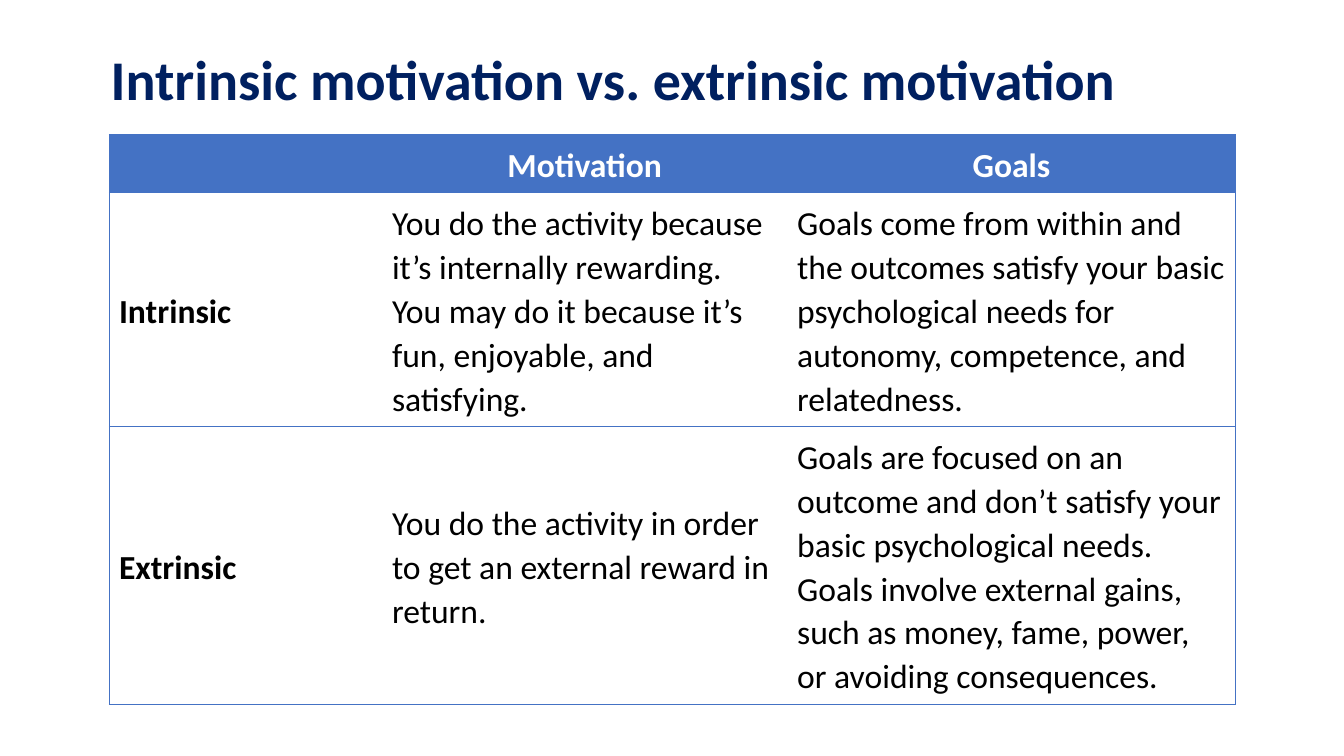
from lxml import etree
from pptx import Presentation
from pptx import util as u
from pptx.dml import color
from pptx.enum import text
from pptx.oxml import ns

BLUE, NAVY, WHITE, BLACK = "4472C4", "002060", "FFFFFF", "000000"
COLUMN_WIDTHS = (6.88, 10.21, 11.3)
ROW_HEIGHTS = (1.46, 5.9, 6.99)
ROWS = (
    ("", "Motivation", "Goals"),
    (
        "Intrinsic",
        "You do the activity because it’s internally rewarding. "
        "You may do it because it’s fun, enjoyable, and satisfying.",
        "Goals come from within and the outcomes satisfy your basic "
        "psychological needs for autonomy, competence, and relatedness.",
    ),
    (
        "Extrinsic",
        "You do the activity in order to get an external reward in return.",
        "Goals are focused on an outcome and don’t satisfy your basic "
        "psychological needs. Goals involve external gains, such as money, "
        "fame, power, or avoiding consequences.",
    ),
)


def rgb(value):
    """Turn a hex string into a colour."""
    return color.RGBColor.from_string(value)


def assign(target, **values):
    """Set each named attribute on the target."""
    for name, value in values.items():
        setattr(target, name, value)


def write(para, words, size, hue, bold):
    """Add one formatted run to a paragraph."""
    span = para.add_run()
    span.text = words
    assign(span.font, name="Calibri", size=u.Pt(size), bold=bold)
    span.font.color.rgb = rgb(hue)


def add_borders(cell, first, last):
    """Draw the horizontal borders of a cell and its outer side borders."""
    properties = cell._tc.get_or_add_tcPr()
    sides = {"lnL": first, "lnR": last, "lnT": True, "lnB": True}
    for side, shown in sides.items():
        line = etree.SubElement(properties, ns.qn(f"a:{side}"), w=str(u.Pt(0.5)))
        if shown:
            fill = etree.SubElement(line, ns.qn("a:solidFill"))
            etree.SubElement(fill, ns.qn("a:srgbClr"), val=BLUE)
        else:
            etree.SubElement(line, ns.qn("a:noFill"))


def fill_cell(cell, words, header, first, last):
    """Format one table cell and write its words."""
    add_borders(cell, first, last)
    if header:
        cell.fill.solid()
        cell.fill.fore_color.rgb = rgb(BLUE)
    else:
        cell.fill.background()
    assign(
        cell,
        vertical_anchor=text.MSO_ANCHOR.MIDDLE,
        margin_left=u.Cm(0.25),
        margin_right=u.Cm(0.25),
        margin_top=u.Cm(0.2),
        margin_bottom=u.Cm(0.15),
    )
    para = cell.text_frame.paragraphs[0]
    align = text.PP_ALIGN.CENTER if header else text.PP_ALIGN.LEFT
    assign(para, alignment=align, line_spacing=1.07)
    if words:
        write(para, words, 24, WHITE if header else BLACK, header or first)


def add_title(page, left, top, width, height):
    """Place the slide title in the given box."""
    box = page.shapes.add_textbox(*map(u.Cm, (left, top, width, height)))
    assign(box.text_frame, word_wrap=True, margin_left=u.Cm(0.25))
    words = "Intrinsic motivation vs. extrinsic motivation"
    write(box.text_frame.paragraphs[0], words, 40, NAVY, True)


def add_comparison(page, left, top):
    """Place the comparison table with its top left corner at the given point."""
    size = sum(COLUMN_WIDTHS), sum(ROW_HEIGHTS)
    frame = page.shapes.add_table(
        len(ROWS), len(COLUMN_WIDTHS), *map(u.Cm, (left, top, *size))
    )
    table = frame.table
    table.horz_banding = False
    for column, width in zip(table.columns, COLUMN_WIDTHS):
        column.width = u.Cm(width)
    for row, height in zip(table.rows, ROW_HEIGHTS):
        row.height = u.Cm(height)
    for i, row in enumerate(ROWS):
        for j, words in enumerate(row):
            fill_cell(table.cell(i, j), words, i == 0, j == 0, j == len(row) - 1)


def main():
    """Build the slide and save the deck."""
    deck = Presentation()
    assign(deck, slide_width=u.Cm(33.87), slide_height=u.Cm(19.05))
    page = deck.slides.add_slide(deck.slide_layouts[6])
    add_comparison(page, 2.75, 3.39)
    add_title(page, 2.54, 1, 27.43, 1.97)
    deck.save("out.pptx")


if __name__ == "__main__":
    main()
